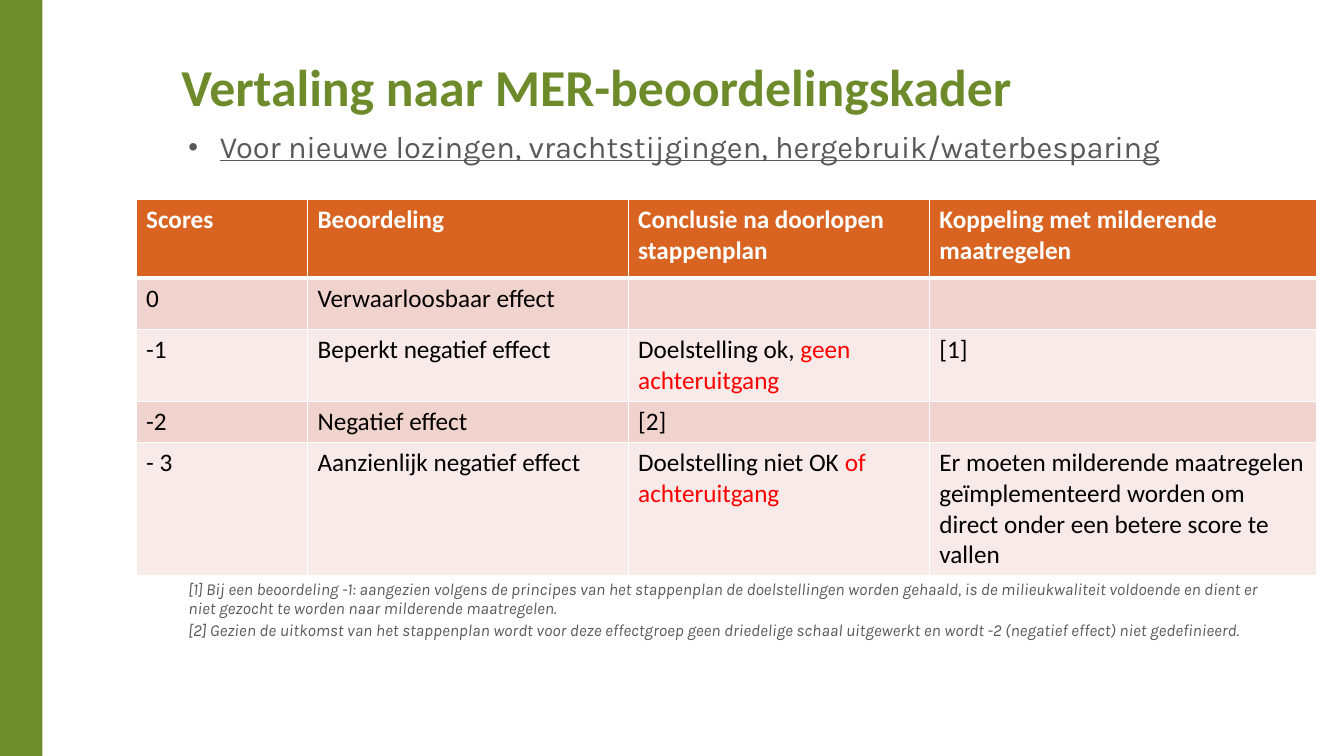
from lxml import etree
from pptx import Presentation
from pptx.dml.color import RGBColor
from pptx.enum.shapes import MSO_SHAPE
from pptx.enum.text import MSO_ANCHOR, PP_ALIGN
from pptx.oxml.ns import qn
from pptx.util import Cm, Pt

RECTANGLE = MSO_SHAPE.RECTANGLE
TOP = MSO_ANCHOR.TOP
LEFT = PP_ALIGN.LEFT

COLOURS = {
    "bar": "6E8C2B",
    "title": "6D8B2B",
    "body": "595959",
    "header": "D96422",
    "odd_row": "F1D3CD",
    "even_row": "F8EAE8",
    "black": "000000",
    "red": "FF0000",
    "white": "FFFFFF",
}

COLUMN_WIDTHS = [4.32, 8.08, 7.59, 9.75]
ROW_HEIGHTS = [1.98, 1.3, 1.8, 1.04, 3.35]
SCORES = [
    ["Scores", "Beoordeling", "Conclusie na doorlopen stappenplan",
     "Koppeling met milderende maatregelen"],
    ["0", "Verwaarloosbaar effect", "", ""],
    ["-1", "Beperkt negatief effect",
     ("Doelstelling ok, ", "geen achteruitgang"), "[1]"],
    ["-2", "Negatief effect", "[2]", ""],
    ["- 3", "Aanzienlijk negatief effect",
     ("Doelstelling niet OK ", "of achteruitgang"),
     "Er moeten milderende maatregelen geïmplementeerd worden om direct "
     "onder een betere score te vallen"],
]
FOOTNOTES = [
    "[1] Bij een beoordeling -1: aangezien volgens de principes van het "
    "stappenplan de doelstellingen worden gehaald, is de milieukwaliteit "
    "voldoende en dient er niet gezocht te worden naar milderende maatregelen.",
    "[2] Gezien de uitkomst van het stappenplan wordt voor deze effectgroep "
    "geen driedelige schaal uitgewerkt en wordt -2 (negatief effect) niet "
    "gedefinieerd.",
]


def colour(name):
    return RGBColor.from_string(COLOURS[name])


def style(font, name, size, tint, bold=False):
    font.name = name
    font.size = Pt(size)
    font.bold = bold
    font.color.rgb = colour(tint)


def clear_insets(frame):
    frame.margin_left = frame.margin_top = 0
    frame.margin_right = frame.margin_bottom = 0
    frame.vertical_anchor = TOP
    frame.word_wrap = True


def add_side_bar(slide, left, top, width, height):
    bar = slide.shapes.add_shape(RECTANGLE, Cm(left), Cm(top), Cm(width), Cm(height))
    bar.shadow.inherit = False
    bar.fill.solid()
    bar.fill.fore_color.rgb = colour("bar")
    bar.line.fill.background()


def place_title(slide, left, top, width, height):
    title = slide.shapes.title
    title.left, title.top = Cm(left), Cm(top)
    title.width, title.height = Cm(width), Cm(height)
    frame = title.text_frame
    clear_insets(frame)
    frame.text = "Vertaling naar MER-beoordelingskader"
    heading = frame.paragraphs[0]
    heading.alignment = LEFT
    heading.line_spacing = Pt(38)
    style(heading.runs[0].font, "Calibri", 37, "title", True)


def add_body_text(slide, left, top, width, height, lines, size):
    box = slide.shapes.add_textbox(Cm(left), Cm(top), Cm(width), Cm(height))
    frame = box.text_frame
    clear_insets(frame)
    frame.text = "\n".join(lines)
    for index, paragraph in enumerate(frame.paragraphs):
        paragraph.line_spacing = 0.9
        paragraph.space_before = Pt(3 if index else 0)
        style(paragraph.runs[0].font, "Karla", size, "body")
    return frame


def add_intro(slide, left, top, width, height):
    frame = add_body_text(
        slide, left, top, width, height,
        ["Voor nieuwe lozingen, vrachtstijgingen, hergebruik/waterbesparing"], 22)
    intro = frame.paragraphs[0]
    intro.runs[0].font.underline = True
    properties = intro._p.get_or_add_pPr()
    properties.set("marL", str(Cm(0.79)))
    properties.set("indent", str(-Cm(0.79)))
    etree.SubElement(properties, qn("a:buSzPct"), val="90000")
    etree.SubElement(properties, qn("a:buFont"), typeface="Arial")
    etree.SubElement(properties, qn("a:buChar"), char="•")


def add_footnotes(slide, left, top, width, height):
    frame = add_body_text(slide, left, top, width, height, FOOTNOTES, 12)
    for footnote in frame.paragraphs:
        footnote.runs[0].font.italic = True


def add_borders(cell, widths):
    properties = cell._tc.get_or_add_tcPr()
    for side, width in widths.items():
        line = etree.SubElement(properties, qn(f"a:ln{side}"), w=str(Pt(width)))
        fill = etree.SubElement(line, qn("a:solidFill"))
        etree.SubElement(fill, qn("a:srgbClr"), val=COLOURS["white"])


def fill_cell(cell, content, row):
    header = row == 0
    above = 3 if row == 1 else 1
    below = 3 if header else 1
    add_borders(cell, {"L": 1, "R": 1, "T": above, "B": below})
    cell.fill.solid()
    band = "header" if header else "odd_row" if row % 2 else "even_row"
    cell.fill.fore_color.rgb = colour(band)
    parts = content if isinstance(content, tuple) else (content,)
    paragraph = cell.text_frame.paragraphs[0]
    for part, tint in zip(parts, ("white" if header else "black", "red")):
        if part:
            run = paragraph.add_run()
            run.text = part
            style(run.font, "Calibri", 18, tint, header)


def add_score_table(slide, left, top):
    table = slide.shapes.add_table(
        len(ROW_HEIGHTS), len(COLUMN_WIDTHS), Cm(left), Cm(top),
        Cm(sum(COLUMN_WIDTHS)), Cm(sum(ROW_HEIGHTS))).table
    for column, width in zip(table.columns, COLUMN_WIDTHS):
        column.width = Cm(width)
    for row, height in zip(table.rows, ROW_HEIGHTS):
        row.height = Cm(height)
    for row, contents in enumerate(SCORES):
        for column, content in enumerate(contents):
            fill_cell(table.cell(row, column), content, row)


def build_score_slide(presentation):
    slide = presentation.slides.add_slide(presentation.slide_layouts[5])
    add_side_bar(slide, 0, 0, 1.07, 19.05)
    place_title(slide, 4.57, 1.6, 27.46, 1.73)
    add_intro(slide, 4.75, 3.33, 27.46, 1.2)
    add_footnotes(slide, 4.75, 14.65, 27.46, 1.7)
    add_score_table(slide, 3.43, 5.03)


def main():
    presentation = Presentation()
    presentation.slide_width = Cm(33.87)
    presentation.slide_height = Cm(19.05)
    build_score_slide(presentation)
    presentation.save("out.pptx")


if __name__ == "__main__":
    main()
